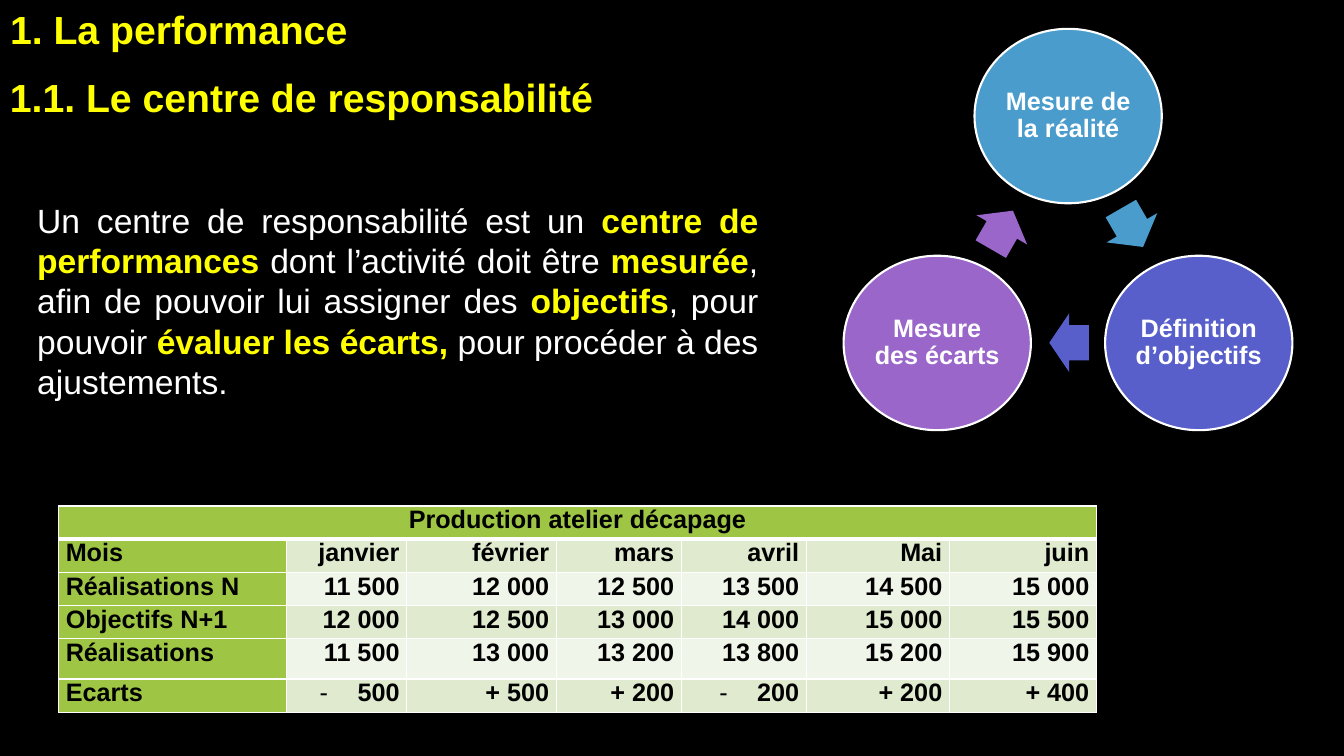
from dataclasses import dataclass
from lxml.etree import SubElement, Element
from pptx import Presentation
from pptx.dml.color import RGBColor
from pptx.enum.shapes import MSO_SHAPE
from pptx.enum.text import MSO_ANCHOR, MSO_AUTO_SIZE, PP_ALIGN
from pptx.oxml.ns import qn
from pptx.util import Pt


@dataclass(frozen=True)
class Theme:
    face: str = "Arial"
    black: str = "000000"
    white: str = "FFFFFF"
    yellow: str = "FFFF00"
    blue: str = "4A9CCC"
    indigo: str = "585FCB"
    purple: str = "9A66CA"
    green: str = "9EC544"
    bands: tuple = ("F0F5E9", "DFEACF")
    head: int = 28
    body: int = 24
    small: int = 18


def rgb(code):
    return RGBColor.from_string(code)


class Board:
    def __init__(self, slide, theme):
        self.slide, self.theme = slide, theme
        slide.background.fill.solid()
        slide.background.fill.fore_color.rgb = rgb(theme.black)

    def style(self, para, size, color, bold=True, align=PP_ALIGN.LEFT, before=0):
        para.alignment = align
        para.space_before = Pt(before)
        font = para.font
        font.name, font.size, font.bold = self.theme.face, Pt(size), bold
        font.color.rgb = rgb(color)

    def title(self, text, box):
        shape = self.slide.shapes.title
        shape.left, shape.top, shape.width, shape.height = map(Pt, box)
        self.fill_head(shape, text)
        shape.text_frame.paragraphs[0].space_after = Pt(3)

    def subtitle(self, text, box):
        shape = self.slide.shapes.add_textbox(*map(Pt, box))
        self.fill_head(shape, text, before=6)
        shape.text_frame.word_wrap = False

    def fill_head(self, shape, text, before=0):
        frame = shape.text_frame
        frame.text = text
        frame.vertical_anchor = MSO_ANCHOR.TOP
        frame.auto_size = MSO_AUTO_SIZE.SHAPE_TO_FIT_TEXT
        self.style(frame.paragraphs[0], self.theme.head, self.theme.yellow, before=before)

    def prose(self, parts, box):
        frame = self.slide.shapes.add_textbox(*map(Pt, box)).text_frame
        frame.word_wrap = True
        frame.auto_size = MSO_AUTO_SIZE.SHAPE_TO_FIT_TEXT
        para = frame.paragraphs[0]
        self.style(para, self.theme.body, self.theme.white, False, PP_ALIGN.JUSTIFY, 6)
        para.space_after = Pt(6)
        for text, key in parts:
            run = para.add_run()
            run.text = text
            if key:
                run.font.bold = True
                run.font.color.rgb = rgb(self.theme.yellow)

    def shape(self, kind, box, color):
        shape = self.slide.shapes.add_shape(kind, *map(Pt, box))
        shape.shadow.inherit = False
        shape.fill.solid()
        shape.fill.fore_color.rgb = rgb(color)
        return shape

    def circle(self, text, box, color):
        disc = self.shape(MSO_SHAPE.OVAL, box, color)
        disc.line.color.rgb = rgb(self.theme.white)
        disc.line.width = Pt(1.5)
        frame = disc.text_frame
        frame.margin_left = frame.margin_right = Pt(2)
        frame.margin_top = frame.margin_bottom = Pt(2)
        frame.word_wrap = True
        frame.vertical_anchor = MSO_ANCHOR.MIDDLE
        frame.text = text
        para = frame.paragraphs[0]
        self.style(para, self.theme.small, self.theme.white, align=PP_ALIGN.CENTER)
        para.line_spacing = 0.9

    def arrow(self, box, turn, color):
        arrow = self.shape(MSO_SHAPE.RIGHT_ARROW, box, color)
        arrow.line.fill.background()
        arrow.adjustments[0], arrow.adjustments[1] = 0.6, 0.5
        arrow.rotation = turn

    def border(self, cell, widths):
        props = cell._tc.get_or_add_tcPr()
        for spot, (side, width) in enumerate(zip("LRTB", widths)):
            line = Element(qn(f"a:ln{side}"), w=str(Pt(width)))
            fill = SubElement(line, qn("a:solidFill"))
            SubElement(fill, qn("a:srgbClr"), val=self.theme.white)
            props.insert(spot, line)

    def dash(self, para):
        props = para._p.get_or_add_pPr()
        props.set("marL", str(Pt(27)))
        props.set("indent", str(-Pt(27)))
        SubElement(props, qn("a:buFont"), typeface=self.theme.face)
        SubElement(props, qn("a:buChar"), char="-")

    def cell(self, cell, text, align, color):
        cell.margin_left = cell.margin_right = Pt(5)
        cell.margin_top = cell.margin_bottom = 0
        cell.fill.solid()
        cell.fill.fore_color.rgb = rgb(color)
        para = cell.text_frame.paragraphs[0]
        if text.startswith("- "):
            self.dash(para)
            text = text[2:]
        para.add_run().text = text
        self.style(para, self.theme.small, self.theme.black, align=align, before=6)

    def table(self, head, rows, spot, widths, heights):
        size = sum(widths), sum(heights)
        table = self.slide.shapes.add_table(
            len(heights), len(widths), *map(Pt, spot + size)).table
        for col, width in zip(table.columns, widths):
            col.width = Pt(width)
        for row, height in zip(table.rows, heights):
            row.height = Pt(height)
        # Merged heading
        top = table.cell(0, 0)
        top.merge(table.cell(0, len(widths) - 1))
        self.cell(top, head, PP_ALIGN.CENTER, self.theme.green)
        self.border(top, (1, 1, 1, 3))
        # Labels and banded values
        for i, row in enumerate(rows, 1):
            for j, text in enumerate(row):
                cell = table.cell(i, j)
                color = self.theme.bands[i % 2] if j else self.theme.green
                align = PP_ALIGN.RIGHT if j else PP_ALIGN.LEFT
                self.cell(cell, text, align, color)
                self.border(cell, (1, 1, 3 if i == 1 else 1, 1))


def main():
    deck = Presentation()
    deck.slide_width, deck.slide_height = Pt(960), Pt(540)
    theme = Theme()
    board = Board(deck.slides.add_slide(deck.slide_layouts[5]), theme)

    # Headings
    board.title("1. La performance", (0, 0, 787.7, 41))
    board.subtitle("1.1. Le centre de responsabilité", (0, 49, 435.6, 41))

    # Definition, with key words marked
    board.prose([
        ("Un centre de responsabilité est un ", False),
        ("centre de performances ", True),
        ("dont l’activité doit être ", False),
        ("mesurée", True),
        (", afin de pouvoir lui assigner des ", False),
        ("objectifs", True),
        (", pour pouvoir ", False),
        ("évaluer les écarts, ", True),
        ("pour procéder à des ajustements.", False),
    ], (19.5, 139, 529.2, 152.6))

    # Production table
    board.table("Production atelier décapage", [
        ("Mois", "janvier", "février", "mars", "avril", "Mai", "juin"),
        ("Réalisations N", "11 500", "12 000", "12 500", "13 500", "14 500", "15 000"),
        ("Objectifs N+1", "12 000", "12 500", "13 000", "14 000", "15 000", "15 500"),
        ("Réalisations", "11 500", "13 000", "13 200", "13 800", "15 200", "15 900"),
        ("Ecarts", "- 500", "+ 500", "+ 200", "- 200", "+ 200", "+ 400"),
    ], (42, 361.4), (162.7, 85.7, 106.9, 89.3, 89.3, 102.2, 105),
        (23.7, 23.7, 23.7, 23.7, 28.8, 23.7))

    # Cycle of circles, each followed by its arrow
    for text, color, left, top, arrow, turn in [
        ("Mesure de la réalité", theme.blue, 696.1, 20.6, (792.7, 141.8, 31.7, 41.8), 60),
        ("Définition d’objectifs", theme.indigo, 789.4, 182.7, (749.5, 223.9, 28.3, 41.8), 180),
        ("Mesure des écarts", theme.purple, 602.6, 182.7, (699.8, 143.3, 31.7, 41.8), 300),
    ]:
        board.circle(text, (left, top, 133.8, 124.6), color)
        board.arrow(arrow, turn, color)

    deck.save("out.pptx")


if __name__ == "__main__":
    main()
